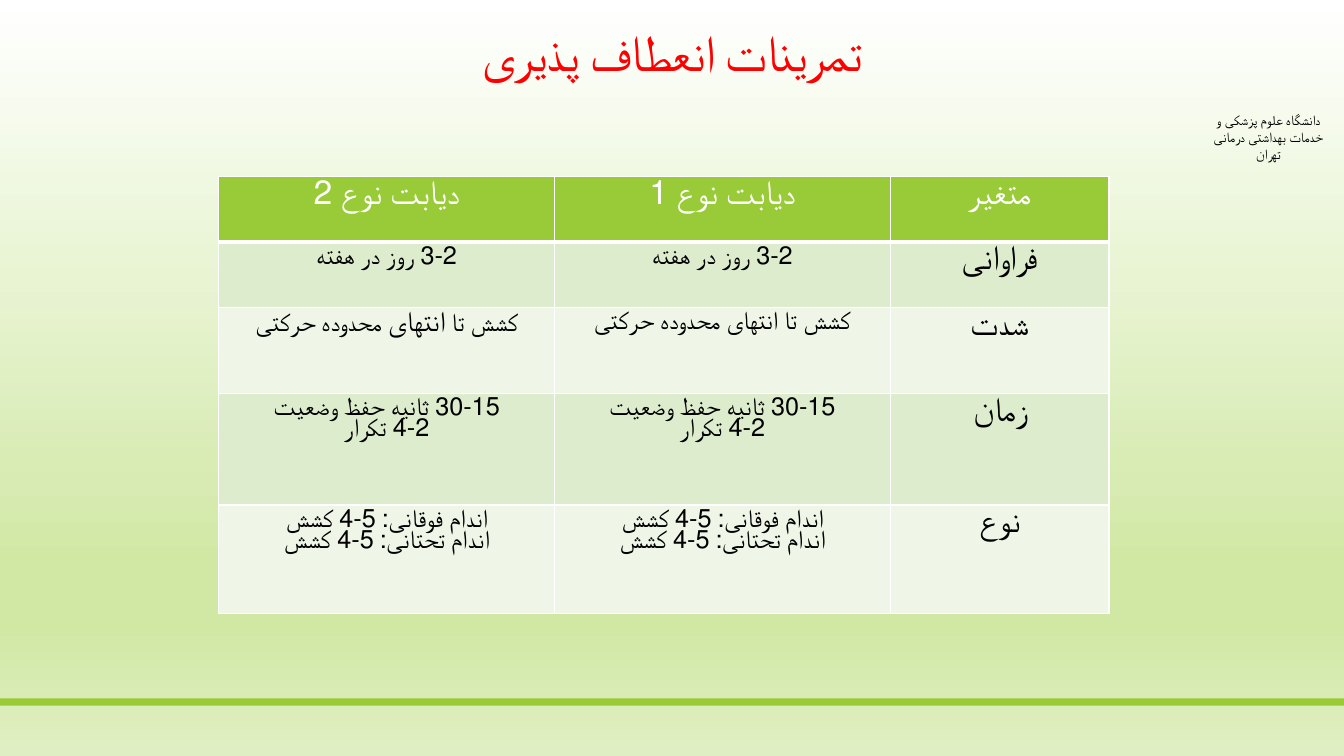
from dataclasses import dataclass

from lxml import etree
from pptx import Presentation
from pptx import util as u
from pptx.dml.color import RGBColor
from pptx.enum import shapes, text
from pptx.oxml.ns import qn


@dataclass(frozen=True)
class Theme:
    """Colours, fonts and type sizes of the slide."""
    green: str = "99CB38"
    bands: tuple = ("DEECCE", "EFF6E8")
    white: str = "FFFFFF"
    black: str = "000000"
    red: str = "FF0000"
    sky: tuple = ((0, "FFFFFF"), (37, "E8F4D2"), (64, "D7EBB2"),
                  (74, "D1E8A5"), (83, "D1E8A5"), (100, "E0EFC3"))
    font: str = "Calibri"
    accent_font: str = "Times New Roman"
    title: int = 36
    label: int = 24
    accent: int = 20
    body: int = 18
    small: int = 10


THEME = Theme()
FREQUENCY = "3-2 روز در هفته"
INTENSITY = "کشش تا انتهای محدوده حرکتی"
SPLIT_INTENSITY = [("کشش تا ", {}),
                   ("انتهای", {"size": THEME.accent, "font": THEME.accent_font}),
                   (" محدوده حرکتی", {})]
DURATION = ["30-15 ثانیه حفظ وضعیت", "4-2 تکرار"]
STRETCHES = ["اندام فوقانی: 5-4 کشش", "اندام تحتانی: 5-4 کشش"]
EXERCISES = [
    (0.65, [["دیابت نوع 2"], ["دیابت نوع 1"], ["متغیر"]]),
    (0.65, [[FREQUENCY], [FREQUENCY], ["فراوانی"]]),
    (0.85, [[SPLIT_INTENSITY], [INTENSITY], ["شدت"]]),
    (1.11, [DURATION, DURATION, ["زمان"]]),
    (1.08, [STRETCHES, STRETCHES, ["نوع"]]),
]
COLUMN_WIDTHS = (3.33, 3.33, 2.17)


def write(frame, lines, size, color, font=THEME.font, spacing=None, tracking=None):
    """Fill a text frame with centred right-to-left paragraphs."""
    frame.word_wrap = True
    for index, line in enumerate(lines):
        paragraph = frame.add_paragraph() if index else frame.paragraphs[0]
        paragraph.alignment = text.PP_ALIGN.CENTER
        paragraph._p.get_or_add_pPr().set("rtl", "1")
        if spacing:
            paragraph.line_spacing = spacing
        for words, style in [(line, {})] if isinstance(line, str) else line:
            run = paragraph.add_run()
            run.text = words
            run.font.name = style.get("font", font)
            run.font.size = u.Pt(style.get("size", size))
            run.font.bold = False
            run.font.color.rgb = RGBColor.from_string(color)
            if tracking:
                run._r.get_or_add_rPr().set("spc", str(round(tracking * 100)))


def paint_background(slide):
    """Lay the vertical green gradient behind the slide."""
    fill = slide.background.fill
    fill.gradient()
    fill.gradient_angle = 270
    stops = slide._element.find(".//" + qn("a:gsLst"))
    for stop in list(stops):
        stops.remove(stop)
    for percent, color in THEME.sky:
        stop = etree.SubElement(stops, qn("a:gs"), pos=str(percent * 1000))
        etree.SubElement(stop, qn("a:srgbClr"), val=color)


def add_footer_band(slide, left, top, width, height):
    """Draw the green band near the foot of the slide."""
    band = slide.shapes.add_shape(shapes.MSO_SHAPE.RECTANGLE, u.Inches(left),
                                  u.Inches(top), u.Inches(width), u.Inches(height))
    band.shadow.inherit = False
    band.fill.solid()
    band.fill.fore_color.rgb = RGBColor.from_string(THEME.green)
    band.line.fill.background()


def add_university(slide, left, top, width, height):
    """Write the name of the university."""
    university = slide.shapes.add_textbox(u.Inches(left), u.Inches(top),
                                          u.Inches(width), u.Inches(height))
    write(university.text_frame, ["دانشگاه علوم پزشکی و خدمات بهداشتی درمانی تهران"],
          THEME.small, THEME.black)


def place_title(slide, left, top, width, height):
    """Move and write the title placeholder."""
    title = slide.shapes.title
    title.left, title.top = u.Inches(left), u.Inches(top)
    title.width, title.height = u.Inches(width), u.Inches(height)
    title.text_frame.vertical_anchor = text.MSO_ANCHOR.TOP
    title.text_frame.auto_size = text.MSO_AUTO_SIZE.NONE
    write(title.text_frame, ["تمرینات انعطاف پذیری"], THEME.title, THEME.red,
          spacing=0.85, tracking=-0.5)


def border_cell(cell, row):
    """Give a cell white borders, heavier between header and body."""
    properties = cell._tc.get_or_add_tcPr()
    heavy = {0: "lnB", 1: "lnT"}.get(row)
    for side in ("lnL", "lnR", "lnT", "lnB"):
        points = 3 if side == heavy else 1
        edge = etree.SubElement(properties, qn("a:" + side), w=str(u.Pt(points)))
        paint = etree.SubElement(edge, qn("a:solidFill"))
        etree.SubElement(paint, qn("a:srgbClr"), val=THEME.white)


def add_exercise_table(slide, left, top, width, height):
    """Build the table of flexibility exercises by type of diabetes."""
    exercises = slide.shapes.add_table(len(EXERCISES), len(COLUMN_WIDTHS), u.Inches(left),
                                       u.Inches(top), u.Inches(width),
                                       u.Inches(height)).table
    for column, column_width in zip(exercises.columns, COLUMN_WIDTHS):
        column.width = u.Inches(column_width)
    for row, (row_height, entries) in enumerate(EXERCISES):
        exercises.rows[row].height = u.Inches(row_height)
        for column, lines in enumerate(entries):
            cell = exercises.cell(row, column)
            is_label = row == 0 or column == len(COLUMN_WIDTHS) - 1
            border_cell(cell, row)
            cell.fill.solid()
            cell.fill.fore_color.rgb = RGBColor.from_string(
                THEME.bands[(row - 1) % 2] if row else THEME.green)
            cell.margin_left = cell.margin_right = u.Inches(0.09)
            cell.margin_top = cell.margin_bottom = u.Inches(0.05)
            write(cell.text_frame, lines, THEME.label if is_label else THEME.body,
                  THEME.black if row else THEME.white, spacing=0.85)


def main():
    """Build and save the slide."""
    deck = Presentation()
    deck.slide_width, deck.slide_height = u.Inches(13.33), u.Inches(7.5)
    slide = deck.slides.add_slide(deck.slide_layouts[5])
    paint_background(slide)
    add_footer_band(slide, 0, 6.93, 13.33, 0.07)
    add_university(slide, 11.82, 1.06, 1.52, 0.61)
    place_title(slide, 2.17, 0.25, 9, 0.84)
    add_exercise_table(slide, 2.17, 1.75, sum(COLUMN_WIDTHS),
                       sum(row_height for row_height, _ in EXERCISES))
    deck.save("out.pptx")


if __name__ == "__main__":
    main()
